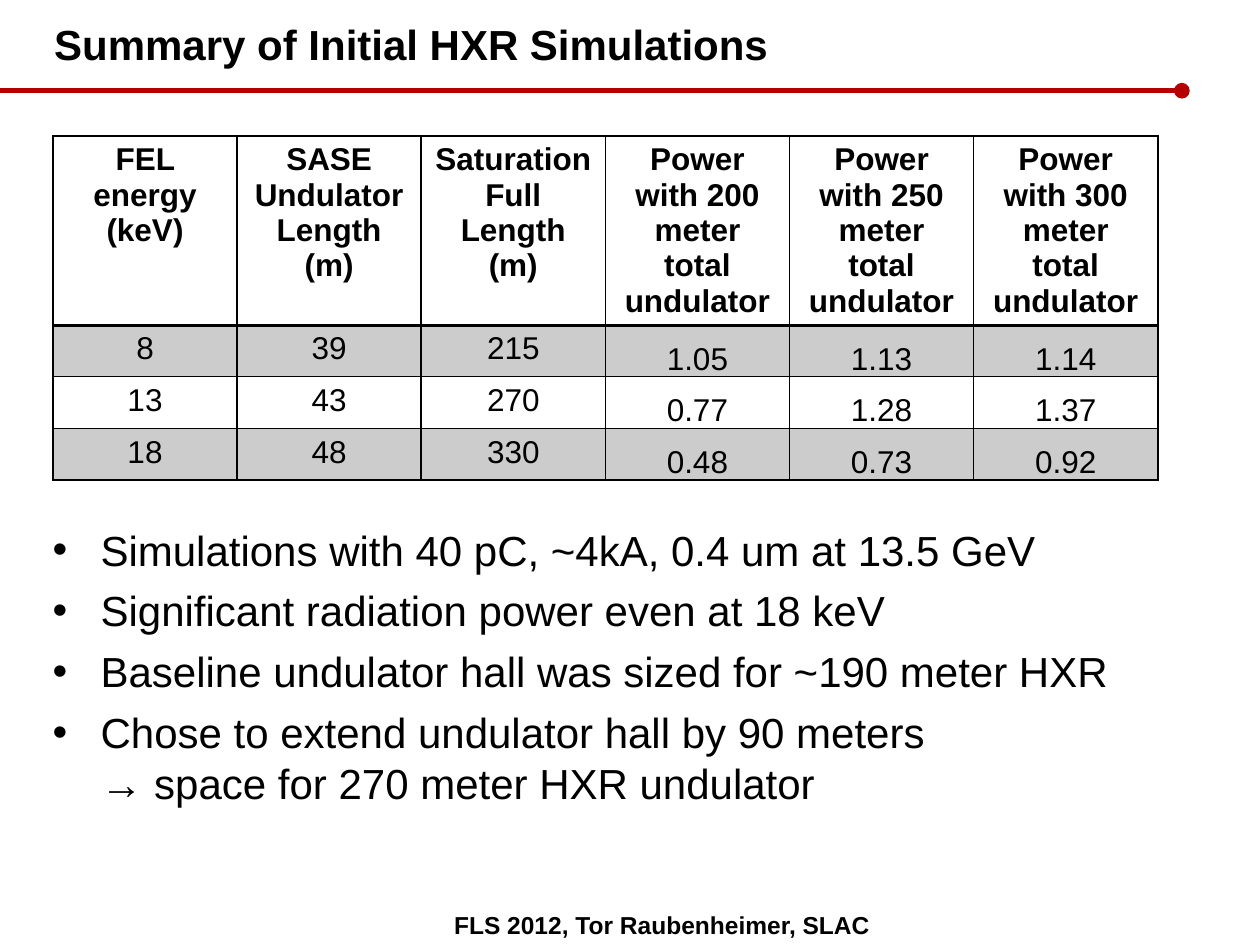
from dataclasses import dataclass

from lxml.etree import SubElement
from pptx import Presentation
from pptx.dml.color import RGBColor
from pptx.enum.shapes import MSO_CONNECTOR as Link
from pptx.enum.text import MSO_ANCHOR as Anchor, PP_ALIGN as Align
from pptx.oxml.ns import qn
from pptx.util import Inches, Pt

BLACK = RGBColor(0x00, 0x00, 0x00)
RED = RGBColor(0xB4, 0x00, 0x00)
GREY = RGBColor(0xCC, 0xCC, 0xCC)
FONT = "Arial"


@dataclass(frozen=True)
class Box:
    left: float
    top: float
    width: float
    height: float

    def place(self) -> tuple:
        return tuple(map(Inches, (self.left, self.top, self.width, self.height)))


@dataclass(frozen=True)
class Style:
    size: int
    bold: bool = False
    align: Align = Align.LEFT


TITLE = Style(24, bold=True)
BULLET = Style(24)
HEAD = Style(18, bold=True, align=Align.CENTER)
DATA = Style(18, align=Align.CENTER)
FOOTER = Style(14, bold=True, align=Align.CENTER)

HEADS = [
    "FEL energy (keV)",
    "SASE\nUndulator Length (m)",
    "Saturation\nFull Length (m)",
    *(f"Power with {length} meter total undulator" for length in (200, 250, 300)),
]
ROWS = [
    ("8", "39", "215", "1.05", "1.13", "1.14"),
    ("13", "43", "270", "0.77", "1.28", "1.37"),
    ("18", "48", "330", "0.48", "0.73", "0.92"),
]
POWER_COL = 3
HEAD_HEIGHT, ROW_HEIGHT = 1.49, 0.41
BULLETS = [
    "Simulations with 40 pC, ~4kA, 0.4 um at 13.5 GeV",
    "Significant radiation power even at 18 keV",
    "Baseline undulator hall was sized for ~190 meter HXR",
    "Chose to extend undulator hall by 90 meters\v→ space for 270 meter HXR undulator",
]


def write(frame, text: str, style: Style) -> None:
    frame.text = text
    frame.word_wrap = True
    for para in frame.paragraphs:
        para.alignment = style.align
        for run in para.runs:
            font = run.font
            font.name, font.size, font.bold = FONT, Pt(style.size), style.bold
            font.color.rgb = BLACK


def add_rule(slide) -> None:
    """Draw the red line under the title, ending in a dot."""
    y = Inches(0.72)
    rule = slide.shapes.add_connector(Link.STRAIGHT, 0, y, Inches(9.38), y)
    rule.line.color.rgb = RED
    rule.line.width = Pt(3)
    SubElement(rule.line._get_or_add_ln(), qn("a:tailEnd"), type="oval")
    SubElement(rule._element.spPr, qn("a:effectLst"))


def add_border(cell, sides: dict[str, int]) -> None:
    props = cell._tc.get_or_add_tcPr()
    for side, points in sides.items():
        edge = SubElement(props, qn(f"a:ln{side}"), w=str(Pt(points)))
        fill = SubElement(edge, qn("a:solidFill"))
        SubElement(fill, qn("a:srgbClr"), val=str(BLACK))


def add_results(slide, box: Box) -> None:
    grid = [HEADS, *ROWS]
    table = slide.shapes.add_table(len(grid), len(HEADS), *box.place()).table
    for col in table.columns:
        col.width = Inches(box.width / len(HEADS))
    for r, values in enumerate(grid):
        table.rows[r].height = Inches(ROW_HEIGHT if r else HEAD_HEIGHT)
        for c, value in enumerate(values):
            cell = table.cell(r, c)
            add_border(cell, {"L": 1, "R": 1, "T": 2 if r == 1 else 1, "B": 1 if r else 2})
            if r % 2:
                cell.fill.solid()
                cell.fill.fore_color.rgb = GREY
            else:
                cell.fill.background()
            write(cell.text_frame, value, DATA if r else HEAD)
            if r and c >= POWER_COL:
                cell.vertical_anchor = Anchor.BOTTOM
                cell.margin_left = cell.margin_right = cell.margin_top = Inches(0.01)
                cell.margin_bottom = 0


def add_text(slide, box: Box, text: str, style: Style):
    frame = slide.shapes.add_textbox(*box.place()).text_frame
    write(frame, text, style)
    return frame


def add_bullets(slide, box: Box) -> None:
    frame = add_text(slide, box, "\n".join(BULLETS), BULLET)
    for i, para in enumerate(frame.paragraphs):
        if i:
            para.space_before = Pt(6)
        props = para._p.get_or_add_pPr()
        props.set("marL", str(Inches(0.38)))
        props.set("indent", str(Inches(-0.38)))
        SubElement(props, qn("a:buFont"), typeface=FONT)
        SubElement(props, qn("a:buChar"), char="•")


def main() -> None:
    deck = Presentation()
    deck.slide_width, deck.slide_height = Inches(10), Inches(7.5)
    slide = deck.slides.add_slide(deck.slide_layouts[5])
    add_rule(slide)

    title = slide.shapes.title
    title.left, title.top, title.width, title.height = Box(0.33, 0.06, 9.42, 0.58).place()
    write(title.text_frame, "Summary of Initial HXR Simulations", TITLE)
    title.text_frame.vertical_anchor = Anchor.MIDDLE

    add_results(slide, Box(0.42, 1.08, 8.77, 2.72))
    add_bullets(slide, Box(0.32, 4.11, 9.42, 2.3))
    add_text(slide, Box(3.1, 7.17, 4.31, 0.33), "FLS 2012, Tor Raubenheimer, SLAC", FOOTER)
    deck.save("out.pptx")


if __name__ == "__main__":
    main()
